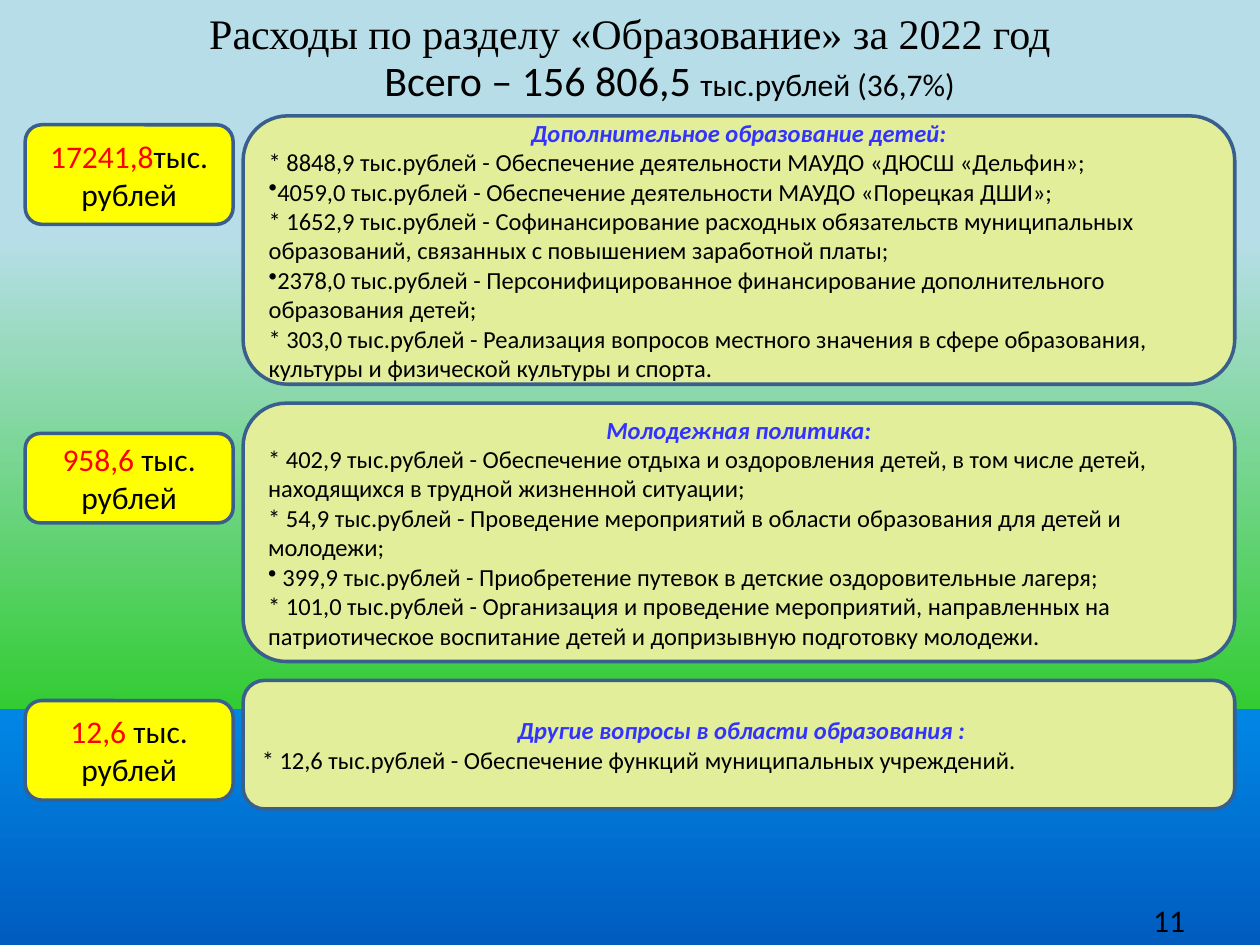
from lxml.etree import SubElement
from pptx import Presentation
from pptx.dml.color import RGBColor
from pptx.enum.shapes import MSO_SHAPE
from pptx.enum.text import MSO_ANCHOR, PP_ALIGN
from pptx.oxml.ns import qn
from pptx.util import Inches, Pt

TITLE = "Расходы по разделу «Образование» за 2022 год"
TOTAL = [("Всего – 156 806,5 ", 24), ("тыс.рублей (36,7%)", 18)]
PAGE_NUMBER = "11"
BULLET = "•"

# Each amount and panel is placed by its (top, height).
SECTIONS = [
    {
        "amount": "17241,8", "unit": "тыс. рублей",
        "amount_at": (0.99, 0.79), "panel_at": (0.92, 2.13),
        "heading": "Дополнительное образование детей:",
        "items": [
            "* 8848,9 тыс.рублей - Обеспечение деятельности МАУДО «ДЮСШ «Дельфин»;",
            "•4059,0 тыс.рублей - Обеспечение деятельности МАУДО «Порецкая ДШИ»;",
            "* 1652,9 тыс.рублей - Софинансирование расходных обязательств муниципальных "
            "образований, связанных с повышением заработной платы;",
            "•2378,0 тыс.рублей - Персонифицированное финансирование дополнительного "
            "образования детей;",
            "* 303,0 тыс.рублей - Реализация вопросов местного значения в сфере образования, "
            "культуры и физической культуры и спорта.",
        ],
    },
    {
        "amount": "958,6 ", "unit": "тыс. рублей",
        "amount_at": (3.44, 0.71), "panel_at": (3.2, 2.05),
        "heading": "Молодежная политика:",
        "items": [
            "* 402,9 тыс.рублей - Обеспечение отдыха и оздоровления детей, в том числе детей, "
            "находящихся в трудной жизненной ситуации;",
            "* 54,9 тыс.рублей - Проведение мероприятий в области образования для детей и "
            "молодежи;",
            "• 399,9 тыс.рублей - Приобретение путевок в детские оздоровительные лагеря;",
            "* 101,0 тыс.рублей - Организация и проведение мероприятий, направленных на "
            "патриотическое воспитание детей и допризывную подготовку молодежи.",
        ],
    },
    {
        "amount": "12,6 ", "unit": "тыс. рублей",
        "amount_at": (5.56, 0.79), "panel_at": (5.4, 1.02),
        "heading": " Другие вопросы в области образования :",
        "items": ["* 12,6 тыс.рублей - Обеспечение функций муниципальных учреждений."],
    },
]
AMOUNT_COLUMN = (0.2, 1.65)
PANEL_COLUMN = (1.93, 7.87)

BLACK, RED, BLUE = "000000", "FF0000", "3333FF"
YELLOW, LIME, OUTLINE = "FFFF00", "E2EE9A", "3A5F8C"
SKY_TO_SEA = [(25, "B7DEE8"), (75, "33CC33"), (75, "0087E6"), (100, "005CBF")]


def rgb(value):
    return RGBColor.from_string(value)


def set_font(font, size, color=BLACK, name="Calibri"):
    font.name, font.size = name, Pt(size)
    font.color.rgb = rgb(color)


def paint_background(slide):
    fill = slide.background.fill
    fill.gradient()
    fill.gradient_angle = 270
    stops = slide.element.find(".//" + qn("a:gsLst"))
    stops.clear()
    for percent, color in SKY_TO_SEA:
        stop = SubElement(stops, qn("a:gs"), pos=str(percent * 1000))
        SubElement(stop, qn("a:srgbClr"), val=color)


def add_rounded_box(slide, column, row, fill=None):
    (left, width), (top, height) = column, row
    box = slide.shapes.add_shape(MSO_SHAPE.ROUNDED_RECTANGLE, Inches(left), Inches(top),
                                 Inches(width), Inches(height))
    box.shadow.inherit = False
    if fill:
        box.fill.solid()
        box.fill.fore_color.rgb = rgb(fill)
        box.line.color.rgb = rgb(OUTLINE)
        box.line.width = Pt(2)
    else:
        box.fill.background()
        box.line.fill.background()
    box.text_frame.word_wrap = True
    box.text_frame.vertical_anchor = MSO_ANCHOR.MIDDLE
    box.text_frame.paragraphs[0].alignment = PP_ALIGN.CENTER
    return box.text_frame


def add_amount(slide, section):
    frame = add_rounded_box(slide, AMOUNT_COLUMN, section["amount_at"], YELLOW)
    for text, color in ((section["amount"], RED), (section["unit"], BLACK)):
        run = frame.paragraphs[0].add_run()
        run.text = text
        set_font(run.font, 18, color)


def add_panel(slide, section):
    frame = add_rounded_box(slide, PANEL_COLUMN, section["panel_at"], LIME)
    heading = frame.paragraphs[0]
    heading.text = section["heading"]
    set_font(heading.font, 14, BLUE)
    heading.font.bold = heading.font.italic = True
    for item in section["items"]:
        paragraph = frame.add_paragraph()
        paragraph.text = item.removeprefix(BULLET)
        paragraph.alignment = PP_ALIGN.LEFT
        set_font(paragraph.font, 14)
        if item.startswith(BULLET):
            properties = paragraph._p.get_or_add_pPr()
            mark = properties.makeelement(qn("a:buChar"), {"char": BULLET})
            properties.find(qn("a:defRPr")).addprevious(mark)


def add_title(slide):
    title = slide.shapes.title
    title.left, title.top, title.width, title.height = 0, 0, Inches(10), Inches(0.52)
    title.text_frame.text = TITLE
    title.text_frame.vertical_anchor = MSO_ANCHOR.MIDDLE
    paragraph = title.text_frame.paragraphs[0]
    paragraph.alignment = PP_ALIGN.CENTER
    set_font(paragraph.font, 24, name="Times New Roman")


def add_total(slide):
    frame = slide.shapes.add_textbox(Inches(2.48), Inches(0.44),
                                     Inches(5.67), Inches(0.39)).text_frame
    frame.word_wrap = True
    frame.vertical_anchor = MSO_ANCHOR.MIDDLE
    frame.paragraphs[0].alignment = PP_ALIGN.CENTER
    for text, size in TOTAL:
        run = frame.paragraphs[0].add_run()
        run.text = text
        set_font(run.font, size)


def main():
    deck = Presentation()
    deck.slide_width, deck.slide_height = Inches(10), Inches(7.5)
    slide = deck.slides.add_slide(deck.slide_layouts[5])
    paint_background(slide)
    add_title(slide)
    page = add_rounded_box(slide, (8.78, 1), (7.11, 0.39)).paragraphs[0]
    page.text = PAGE_NUMBER
    set_font(page.font, 18)
    for section in reversed(SECTIONS):
        add_amount(slide, section)
        add_panel(slide, section)
    add_total(slide)
    deck.save("out.pptx")


if __name__ == "__main__":
    main()
